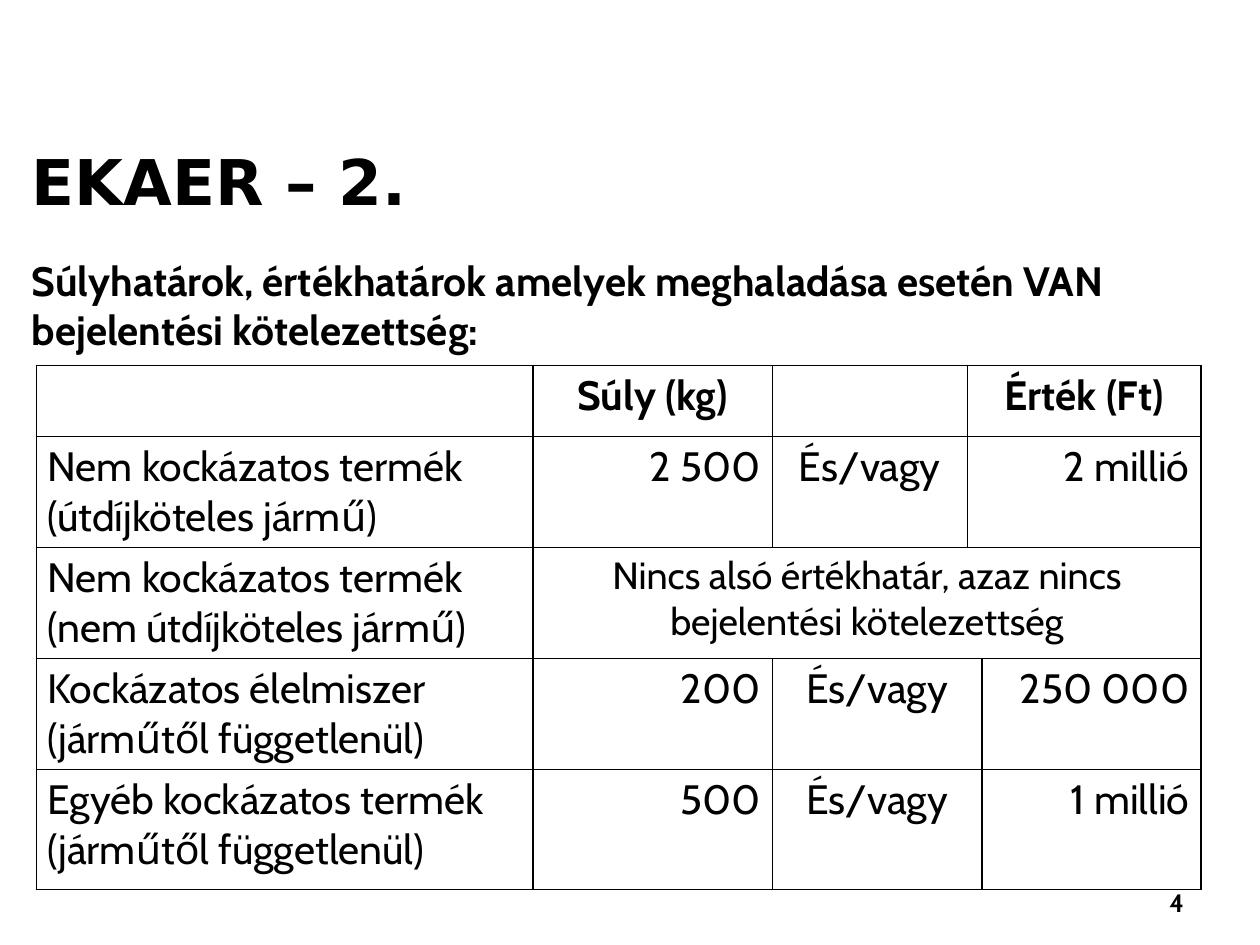
from lxml import etree
from pptx import Presentation
from pptx import util as u
from pptx.dml.color import RGBColor
from pptx.enum import text
from pptx.oxml import ns

COLORS = {"ink": "000000", "paper": "FFFFFF"}
LEFT, CENTER, RIGHT = text.PP_ALIGN.LEFT, text.PP_ALIGN.CENTER, text.PP_ALIGN.RIGHT
COLUMN_WIDTHS = [4.38, 2.11, 1.72, 0.13, 1.93]
ROW_HEIGHTS = [0.63, 0.97, 0.97, 0.97, 1.06]
COLUMN_ALIGNS = [LEFT, RIGHT, CENTER, RIGHT, RIGHT]
LIMITS = [
    ["", "Súly (kg)", "", "Érték (Ft)", ""],
    ["Nem kockázatos termék\n(útdíjköteles jármű)", "2 500", "És/vagy", "2 millió", ""],
    ["Nem kockázatos termék\n(nem útdíjköteles jármű)",
     "Nincs alsó értékhatár, azaz nincs bejelentési kötelezettség", "", "", ""],
    ["Kockázatos élelmiszer (járműtől függetlenül)", "200", "És/vagy", "", "250 000"],
    ["Egyéb kockázatos termék (járműtől függetlenül)", "500", "És/vagy", "", "1 millió"],
]
MERGES = [(0, 3, 4), (1, 3, 4), (2, 1, 4), (3, 2, 3), (4, 2, 3)]


def write(frame, words, align=LEFT, **font_format):
    """Fill a text frame with aligned paragraphs in one font format."""
    frame.text = words
    font_format = {"name": "Cabin", "size": u.Pt(26), "bold": False} | font_format
    for paragraph in frame.paragraphs:
        paragraph.alignment = align
        for run in paragraph.runs:
            for key, value in font_format.items():
                setattr(run.font, key, value)
            run.font.color.rgb = RGBColor.from_string(COLORS["ink"])


def place(holder, left, top, width, height, side_inset=0.06):
    """Position a text holder and return its prepared frame."""
    bounds = {"left": left, "top": top, "width": width, "height": height}
    for key, value in bounds.items():
        setattr(holder, key, u.Inches(value))
    frame = holder.text_frame
    layout = {
        "margin_left": u.Inches(side_inset), "margin_right": u.Inches(side_inset),
        "margin_top": u.Inches(0.06), "margin_bottom": u.Inches(0.06),
        "word_wrap": True, "auto_size": text.MSO_AUTO_SIZE.NONE,
        "vertical_anchor": text.MSO_ANCHOR.TOP,
    }
    for key, value in layout.items():
        setattr(frame, key, value)
    return frame


def add_text(slide, words, bounds, side_inset=0.06, **style):
    """Add a wrapped text box."""
    box = slide.shapes.add_textbox(0, 0, 0, 0)
    write(place(box, *bounds, side_inset), words, **style)


def outline(cell):
    """Draw thin borders on all four sides of a cell."""
    properties = cell._tc.get_or_add_tcPr()
    for position, side in enumerate(("lnL", "lnR", "lnT", "lnB")):
        line = etree.Element(ns.qn(f"a:{side}"), w=str(u.Pt(1)))
        fill = etree.SubElement(line, ns.qn("a:solidFill"))
        etree.SubElement(fill, ns.qn("a:srgbClr"), val=COLORS["ink"])
        properties.insert(position, line)


def add_limits(slide):
    """Add the table of weight and value limits."""
    limits = slide.shapes.add_table(
        len(LIMITS), len(COLUMN_WIDTHS), u.Inches(0.32), u.Inches(3.22),
        u.Inches(sum(COLUMN_WIDTHS)), u.Inches(sum(ROW_HEIGHTS))).table
    for column, width in zip(limits.columns, COLUMN_WIDTHS):
        column.width = u.Inches(width)
    for row, height in zip(limits.rows, ROW_HEIGHTS):
        row.height = u.Inches(height)
    for row, first, last in MERGES:
        limits.cell(row, first).merge(limits.cell(row, last))
    for r, entries in enumerate(LIMITS):
        for c, words in enumerate(entries):
            cell = limits.cell(r, c)
            cell.fill.solid()
            cell.fill.fore_color.rgb = RGBColor.from_string(COLORS["paper"])
            outline(cell)
            exempt = (r, c) == (2, 1)
            align = CENTER if r == 0 or exempt else COLUMN_ALIGNS[c]
            if words:
                write(cell.text_frame, words, align, bold=r == 0,
                      size=u.Pt(24 if exempt else 26))


def main():
    """Build the slide on EKAER reporting limits."""
    deck = Presentation()
    deck.slide_width, deck.slide_height = u.Inches(11.11), u.Inches(8.33)
    slide = deck.slides.add_slide(deck.slide_layouts[5])
    heading = place(slide.shapes.title, 0.22, 1.2, 10.59, 0.8)
    write(heading, "EKAER – 2.", name="DejaVu Sans", size=u.Pt(40), bold=True)
    add_text(slide, "Súlyhatárok, értékhatárok amelyek meghaladása esetén VAN "
             "bejelentési kötelezettség:", (0.22, 2.19, 10.59, 1), bold=True)
    add_limits(slide)
    add_text(slide, "4", (9.23, 7.76, 1.32, 0.5), 0.11,
             align=RIGHT, size=u.Pt(16), bold=True)
    deck.save("out.pptx")


if __name__ == "__main__":
    main()
